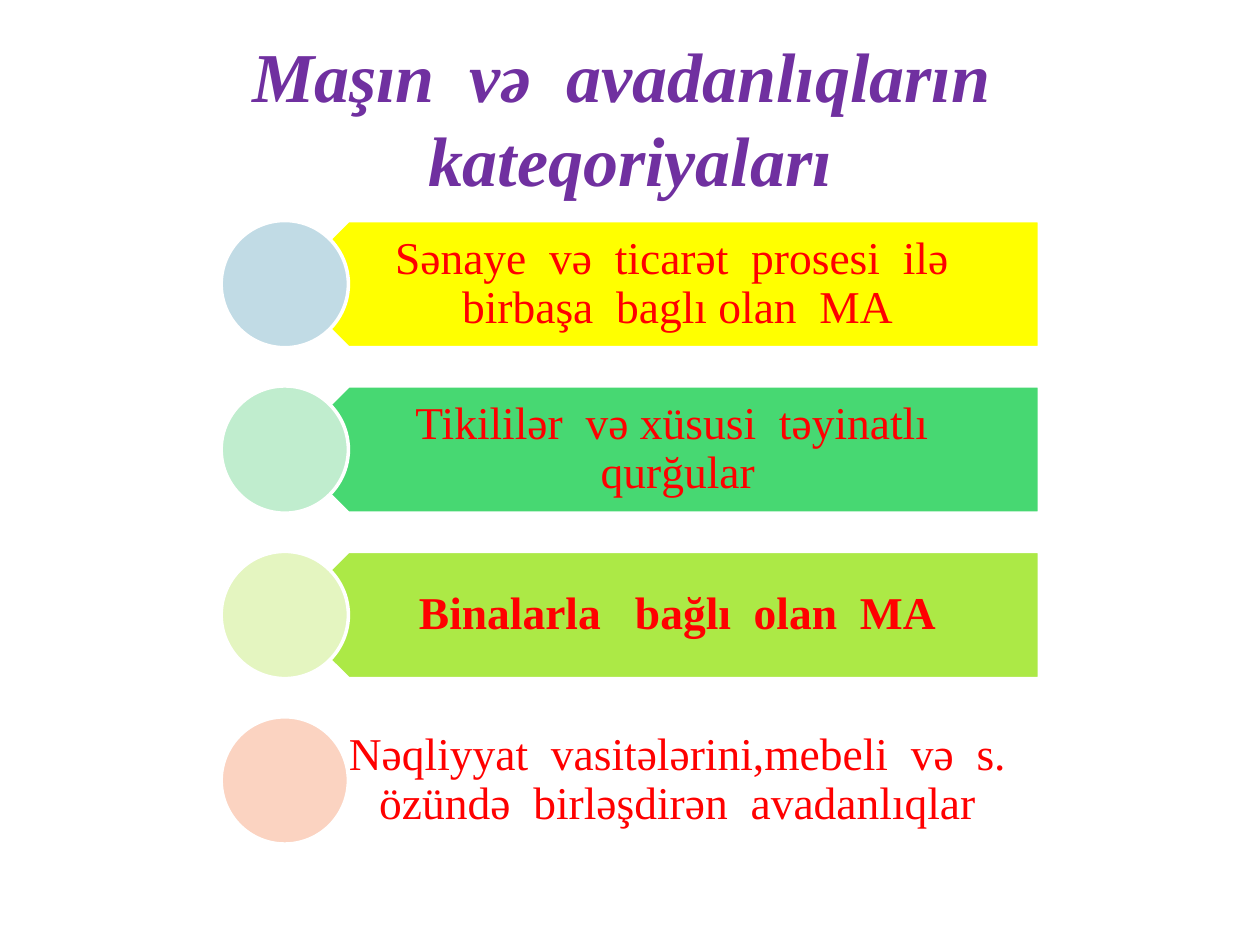
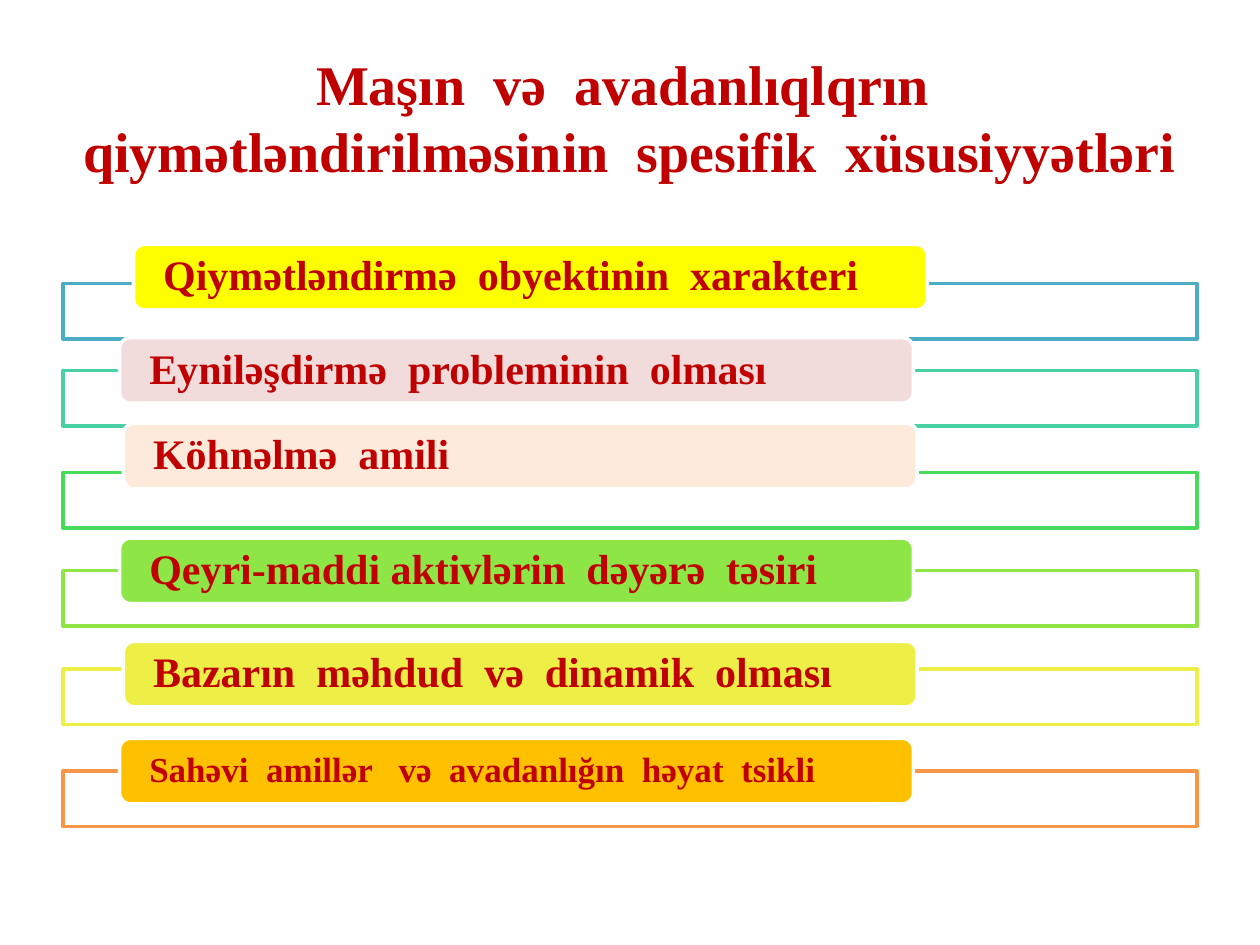
import pptx
import pptx.util
import pptx.dml.color
import pptx.enum.shapes
import pptx.enum.text
import pptx.oxml.ns
import lxml.etree

Inches = pptx.util.Inches
Pt = pptx.util.Pt
RGBColor = pptx.dml.color.RGBColor
SHAPE = pptx.enum.shapes.MSO_SHAPE
ALIGN = pptx.enum.text.PP_ALIGN
MIDDLE = pptx.enum.text.MSO_ANCHOR.MIDDLE

FONT = "Times New Roman"
WHITE = RGBColor(0xFF, 0xFF, 0xFF)
PURPLE = RGBColor(0x70, 0x30, 0xA0)
RED = RGBColor(0xFF, 0x00, 0x00)
DARK_RED = RGBColor(0xC0, 0x00, 0x00)
YELLOW = RGBColor(0xFF, 0xFF, 0x00)
GREEN = RGBColor(0x47, 0xD8, 0x72)
LIME = RGBColor(0xAC, 0xE9, 0x46)
PALE_BLUE = RGBColor(0xC1, 0xDB, 0xE5)
PALE_GREEN = RGBColor(0xC0, 0xED, 0xCE)
PALE_LIME = RGBColor(0xE4, 0xF5, 0xC0)
PALE_CORAL = RGBColor(0xFB, 0xD3, 0xC1)
BLUE = RGBColor(0x4B, 0xAC, 0xC6)
TEAL = RGBColor(0x49, 0xD1, 0xA3)
BRIGHT_GREEN = RGBColor(0x47, 0xDC, 0x57)
LEAF = RGBColor(0x8D, 0xE6, 0x46)
LEMON = RGBColor(0xEE, 0xEF, 0x46)
ORANGE = RGBColor(0xF7, 0x96, 0x46)
ROSE = RGBColor(0xF2, 0xDC, 0xDB)
PEACH = RGBColor(0xFD, 0xEA, 0xDA)
AMBER = RGBColor(0xFF, 0xC0, 0x00)


def write(shape, text, size, color, bold=False, italic=False,
          align=ALIGN.CENTER, spacing=None, margins=(0.1, 0.05, 0.1, 0.05)):
    frame = shape.text_frame
    frame.word_wrap = True
    frame.vertical_anchor = MIDDLE
    (frame.margin_left, frame.margin_top,
     frame.margin_right, frame.margin_bottom) = map(Inches, margins)
    paragraph = frame.paragraphs[0]
    paragraph.alignment = align
    paragraph.line_spacing = spacing
    run = paragraph.add_run()
    run.text = text
    run.font.name = FONT
    run.font.size = Pt(size)
    run.font.bold = bold
    run.font.italic = italic
    run.font.color.rgb = color


def add_block(slide, preset, left, top, width, height, fill, line=WHITE):
    block = slide.shapes.add_shape(
        preset, Inches(left), Inches(top), Inches(width), Inches(height))
    block.shadow.inherit = False
    if fill is None:
        block.fill.background()
    else:
        block.fill.solid()
        block.fill.fore_color.rgb = fill
    block.line.color.rgb = line
    block.line.width = Pt(2)
    return block


deck = pptx.Presentation()
deck.slide_width = Inches(10)
deck.slide_height = Inches(7.5)

# Titles
titles = [
    ("Maşın  və  avadanlıqların  kateqoriyaları",
     dict(size=40, color=PURPLE, bold=True, italic=True)),
    ("Maşın  və  avadanlıqlqrın  qiymətləndirilməsinin  spesifik  xüsusiyyətləri",
     dict(size=32, color=DARK_RED, bold=True)),
]
for wording, title_format in titles:
    slide = deck.slides.add_slide(deck.slide_layouts[5])
    title = slide.shapes.title
    title.left, title.top = Inches(0.5), Inches(0.3)
    title.width, title.height = Inches(9), Inches(1.25)
    write(title, wording, **title_format)
categories_slide, features_slide = deck.slides

# Slide 1: categories, each an arrow band with a circle over its tip
categories = [
    ("Sənaye  və  ticarət  prosesi  ilə  birbaşa  baglı olan  MA",
     YELLOW, PALE_BLUE, False),
    ("Tikililər  və xüsusi  təyinatlı  qurğular", GREEN, PALE_GREEN, False),
    ("Binalarla   bağlı  olan  MA", LIME, PALE_LIME, True),
    ("Nəqliyyat  vasitələrini,mebeli  və  s. özündə  birləşdirən  avadanlıqlar",
     None, PALE_CORAL, False),
]
BAND_LEFT, BAND_WIDTH, BAND_HEIGHT = 2.26, 5.99, 1.01
for row, (category, band_color, circle_color, bold) in enumerate(categories):
    top = 1.75 + row * 1.313
    band = add_block(categories_slide, SHAPE.PENTAGON, BAND_LEFT, top,
                     BAND_WIDTH, BAND_HEIGHT, band_color)
    band.rotation = 180
    # The band is turned round, so its wording stands in an upright box
    label = categories_slide.shapes.add_textbox(
        Inches(BAND_LEFT), Inches(top), Inches(BAND_WIDTH), Inches(BAND_HEIGHT))
    write(label, category, 26, RED, bold=bold, spacing=0.9,
          margins=(0.45, 0.11, 0.2, 0.11))
    add_block(categories_slide, SHAPE.OVAL, BAND_LEFT - BAND_HEIGHT / 2, top,
              BAND_HEIGHT, BAND_HEIGHT, circle_color)

# Slide 2: features, each a plate over an outlined frame
features = [  # wording, frame top, frame colour, plate left, plate top, plate colour, size
    ("Qiymətləndirmə  obyektinin  xarakteri", 2.25, BLUE, 1.06, 1.94, YELLOW, 24),
    ("Eyniləşdirmə  probleminin  olması", 2.94, TEAL, 0.95, 2.68, ROSE, 24),
    ("Köhnəlmə  amili", 3.75, BRIGHT_GREEN, 0.98, 3.36, PEACH, 24),
    ("Qeyri-maddi aktivlərin  dəyərə  təsiri", 4.53, LEAF, 0.95, 4.27, LEAF, 24),
    ("Bazarın  məhdud  və  dinamik  olması", 5.31, LEMON, 0.98, 5.09, LEMON, 24),
    ("Sahəvi  amillər   və  avadanlığın  həyat  tsikli",
     6.12, ORANGE, 0.95, 5.86, AMBER, 20),
]
for feature, frame_top, frame_color, left, top, plate_color, size in features:
    outline = add_block(features_slide, SHAPE.RECTANGLE, 0.5, frame_top, 9, 0.44,
                        WHITE, line=frame_color)
    # White fill at 90 % opacity
    white_fill = outline.fill._xPr.find(pptx.oxml.ns.qn("a:solidFill"))[0]
    lxml.etree.SubElement(white_fill, pptx.oxml.ns.qn("a:alpha"), val="90000")
    plate = add_block(features_slide, SHAPE.ROUNDED_RECTANGLE, left, top, 6.3, 0.52,
                      plate_color)
    write(plate, feature, size, DARK_RED, bold=True, align=ALIGN.LEFT,
          spacing=0.9, margins=(0.21, 0, 0.21, 0))

deck.save("out.pptx")
